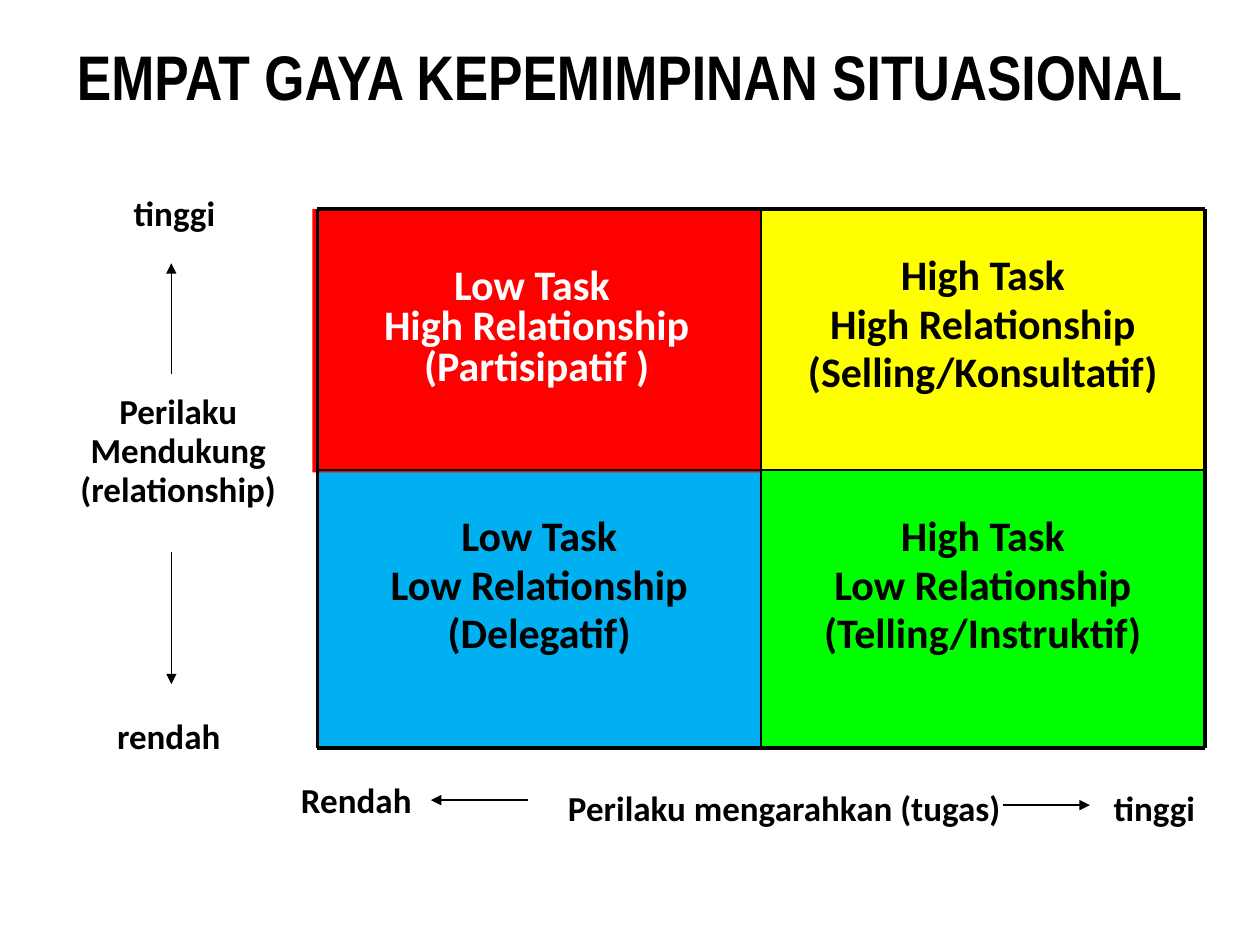
from lxml import etree
from pptx import Presentation
from pptx import util as u
from pptx.dml.color import RGBColor
from pptx.enum import shapes, text
from pptx.oxml.ns import qn

PX = 9144  # EMU in one px, 100 px to the inch
BLACK = RGBColor(0, 0, 0)
WHITE = RGBColor(255, 255, 255)
RED = RGBColor(255, 0, 0)
YELLOW = RGBColor(255, 255, 0)
GREEN = RGBColor(0, 255, 0)
BLUE = RGBColor(0, 0xB0, 0xF0)

LEFT, MID_X, RIGHT = 252, 604, 956
TOP, MID_Y, BOTTOM = 166, 373, 594
CENTER, START = text.PP_ALIGN.CENTER, text.PP_ALIGN.LEFT


def px(*values):
    return [u.Emu(v * PX) for v in values]


def write(sp, lines, size, color=BLACK, font="Calibri", align=CENTER,
          spacing=1.0, gap=0):
    tf = sp.text_frame
    tf.word_wrap = True
    tf.text = "\n".join(lines)
    for i, p in enumerate(tf.paragraphs):
        p.alignment = align
        p.line_spacing = spacing
        p.space_before = u.Pt(gap if i else 0)
        for r in p.runs:
            r.font.name, r.font.size, r.font.bold = font, u.Pt(size), True
            r.font.color.rgb = color


def add_quadrant(s, box, fill, lines, color=BLACK, inset=39, gap=4.8):
    sp = s.shapes.add_shape(shapes.MSO_SHAPE.RECTANGLE, *px(*box))
    sp.shadow.inherit = False
    sp.fill.solid()
    sp.fill.fore_color.rgb = fill
    sp.line.fill.background()
    write(sp, lines, 24, color, spacing=0.8, gap=gap)
    sp.text_frame.vertical_anchor = text.MSO_ANCHOR.TOP
    sp.text_frame.margin_top = px(inset)[0]


def add_label(s, box, *lines, **style):
    sp = s.shapes.add_textbox(*px(*box))
    write(sp, lines, 20, **style)


def add_line(s, ends, width, arrow=False):
    c = s.shapes.add_connector(shapes.MSO_CONNECTOR.STRAIGHT, *px(*ends))
    c.line.color.rgb = BLACK
    c.line.width = u.Pt(width)
    if arrow:
        etree.SubElement(c.line._get_or_add_ln(), qn("a:tailEnd"), type="triangle")
    etree.SubElement(c._element.spPr, qn("a:effectLst"))


def add_title(s, title):
    sp = s.shapes.add_textbox(*px(50, -3, 900, 125))
    write(sp, [title], 36, font="Arial Narrow")
    tf = sp.text_frame
    tf.vertical_anchor = text.MSO_ANCHOR.MIDDLE
    tf.margin_left = tf.margin_right = 0


def main():
    prs = Presentation()
    prs.slide_width, prs.slide_height = px(1000, 750)
    s = prs.slides.add_slide(prs.slide_layouts[6])

    # Leadership styles
    w, upper, lower = MID_X - LEFT, MID_Y - TOP, BOTTOM - MID_Y
    add_quadrant(s, (MID_X, MID_Y, w, lower), GREEN,
                 ["High Task", "Low Relationship", "(Telling/Instruktif)"])
    add_quadrant(s, (LEFT, MID_Y, w, lower), BLUE,
                 ["Low Task", "Low Relationship", "(Delegatif)"])
    add_quadrant(s, (MID_X, TOP, w, upper), YELLOW,
                 ["High Task", "High Relationship", "(Selling/Konsultatif)"])
    add_quadrant(s, (LEFT - 4, TOP, w + 4, upper + 2), RED,
                 ["Low Task ", "High Relationship", "(Partisipatif )"],
                 WHITE, inset=47, gap=0)

    # Grid: thick frame, thin middle lines
    for y, width in ((TOP, 2.25), (MID_Y, 1), (BOTTOM, 2.25)):
        add_line(s, (LEFT, y, RIGHT, y), width)
    for x, width in ((LEFT, 2.25), (MID_X, 1), (RIGHT, 2.25)):
        add_line(s, (x, TOP, x, BOTTOM), width)

    # Relationship axis
    add_label(s, (78, 147, 121, 44), "tinggi")
    add_label(s, (35, 319, 213, 96), "Perilaku", "Mendukung", "(relationship)",
              spacing=0.5, gap=10)
    add_label(s, (61, 562, 146, 44), "rendah")

    # Task axis
    add_label(s, (229, 613, 115, 44), "Rendah", align=START)
    add_label(s, (441, 619, 366, 44), "Perilaku mengarahkan (tugas)", align=START)
    add_label(s, (874, 619, 98, 44), "tinggi", align=START)

    # Axis arrows
    for ends in ((136, 297, 136, 209), (136, 438, 136, 543),
                 (419, 635, 342, 635), (796, 639, 865, 639)):
        add_line(s, ends, 0.75, arrow=True)

    add_title(s, "EMPAT GAYA KEPEMIMPINAN SITUASIONAL")
    prs.save("out.pptx")


if __name__ == "__main__":
    main()
